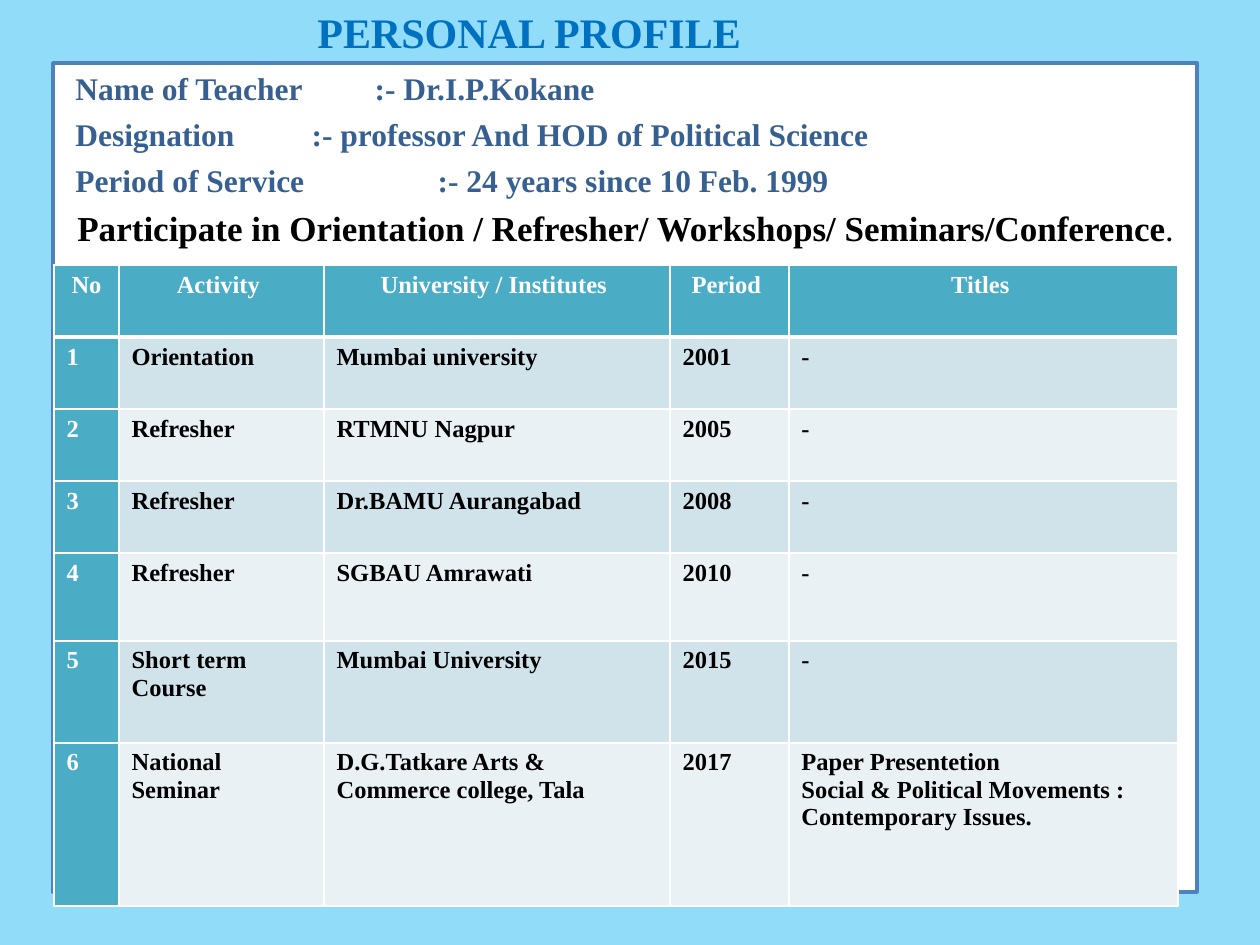
import pptx
import pptx.util
import pptx.dml.color
import pptx.enum.shapes
import pptx.enum.text
import lxml.etree

PX = 914400 // 126
NAMESPACE = "{http://schemas.openxmlformats.org/drawingml/2006/main}"
SERIF = "Times New Roman"
TEAL = "4BACC6"
WHITE = "FFFFFF"
BLACK = "000000"
BANDS = ["D0E3EA", "E9F1F5"]
CENTER = pptx.enum.text.PP_ALIGN.CENTER

COLUMN_WIDTHS = [65, 205, 346, 119, 389]
ROW_HEIGHTS = [72, 72, 72, 72, 88, 102, 163]
ACTIVITIES = [
    ["No", "Activity ", "University / Institutes ", "Period ", "Titles "],
    ["1", "Orientation", "Mumbai university", "2001", "-"],
    ["2", "Refresher", "RTMNU Nagpur", "2005", "-"],
    ["3", "Refresher", "Dr.BAMU Aurangabad", "2008", "-"],
    ["4", "Refresher", "SGBAU Amrawati", "2010", "-"],
    ["5", "Short term Course", "Mumbai University", "2015", "-"],
    ["6", "National Seminar", "D.G.Tatkare Arts & Commerce college, Tala", "2017",
     "Paper Presentetion\nSocial & Political Movements : Contemporary Issues."],
]
PROFILE = [
    "Name of Teacher\t\t:- Dr.I.P.Kokane",
    "Designation \t\t:- professor And HOD of Political Science",
    "Period of Service \t\t:- 24 years since 10 Feb. 1999",
]


def px(*lengths):
    return [pptx.util.Emu(length * PX) for length in lengths]


def color(value):
    return pptx.dml.color.RGBColor.from_string(value)


def paint(fill, value):
    fill.solid()
    fill.fore_color.rgb = color(value)


def add_span(para, text, size, shade, bold=True, name=SERIF):
    span = para.add_run()
    span.text = text
    formats = {"size": pptx.util.Pt(size), "bold": bold, "name": name}
    for key, value in formats.items():
        setattr(span.font, key, value)
    span.font.color.rgb = color(shade)


def add_box(page, *bounds):
    box = page.shapes.add_textbox(*px(*bounds))
    box.text_frame.word_wrap = True
    return box.text_frame


def add_panel(page):
    panel = page.shapes.add_shape(
        pptx.enum.shapes.MSO_SHAPE.RECTANGLE, *px(53, 63, 1144, 829))
    panel.shadow.inherit = False
    paint(panel.fill, WHITE)
    panel.line.color.rgb = color("4F81BD")
    panel.line.width = pptx.util.Pt(2)


def add_profile(page):
    frame = add_box(page, 63, 63, 1124, 781)
    for index in range(len(PROFILE) + 1):
        para = frame.paragraphs[0] if index == 0 else frame.add_paragraph()
        para.space_before = pptx.util.Pt(4.5)
        properties = para._p.get_or_add_pPr()
        properties.set("marL", "342900")
        properties.set("indent", "-342900")
        if index < len(PROFILE):
            add_span(para, PROFILE[index], 18, "376092")
    para.alignment = CENTER
    add_span(para, "Participate in Orientation / Refresher/ Workshops/ Seminars/Conference",
             20, BLACK)
    add_span(para, ". ", 14, BLACK)
    add_span(para, " ", 18, BLACK, bold=False)


def add_borders(cell, widths):
    properties = cell._tc.get_or_add_tcPr()
    for side, width in zip("LRTB", widths):
        line = lxml.etree.SubElement(
            properties, NAMESPACE + "ln" + side, w=str(pptx.util.Pt(width)))
        fill = lxml.etree.SubElement(line, NAMESPACE + "solidFill")
        lxml.etree.SubElement(fill, NAMESPACE + "srgbClr", val=WHITE)


def fill_cell(cell, text, row, column):
    header = row == 0
    accent = header or column == 0
    add_borders(cell, [1, 1, 3 if row == 1 else 1, 3 if header else 1])
    paint(cell.fill, TEAL if accent else BANDS[(row - 1) % 2])
    frame = cell.text_frame
    for index, line in enumerate(text.split("\n")):
        para = frame.paragraphs[0] if index == 0 else frame.add_paragraph()
        if header:
            para.alignment = CENTER
        add_span(para, line, 14, WHITE if accent else BLACK)


def add_activities(page):
    bounds = px(54, 265, sum(COLUMN_WIDTHS), sum(ROW_HEIGHTS))
    table = page.shapes.add_table(len(ROW_HEIGHTS), len(COLUMN_WIDTHS), *bounds).table
    for column, width in zip(table.columns, px(*COLUMN_WIDTHS)):
        column.width = width
    for row, height in zip(table.rows, px(*ROW_HEIGHTS)):
        row.height = height
    for row, texts in enumerate(ACTIVITIES):
        for column, text in enumerate(texts):
            fill_cell(table.cell(row, column), text, row, column)


def add_title(page):
    para = add_box(page, 242, 0, 588, 63).paragraphs[0]
    add_span(para, "\t", 18, BLACK, bold=False, name="Calibri")
    add_span(para, "PERSONAL PROFILE", 24, "0070C0")


def main():
    deck = pptx.Presentation()
    deck.slide_width, deck.slide_height = px(1260, 945)
    page = deck.slides.add_slide(deck.slide_layouts[6])
    paint(page.background.fill, "91DDF9")
    add_panel(page)
    add_profile(page)
    add_activities(page)
    add_title(page)
    deck.save("out.pptx")


if __name__ == "__main__":
    main()
